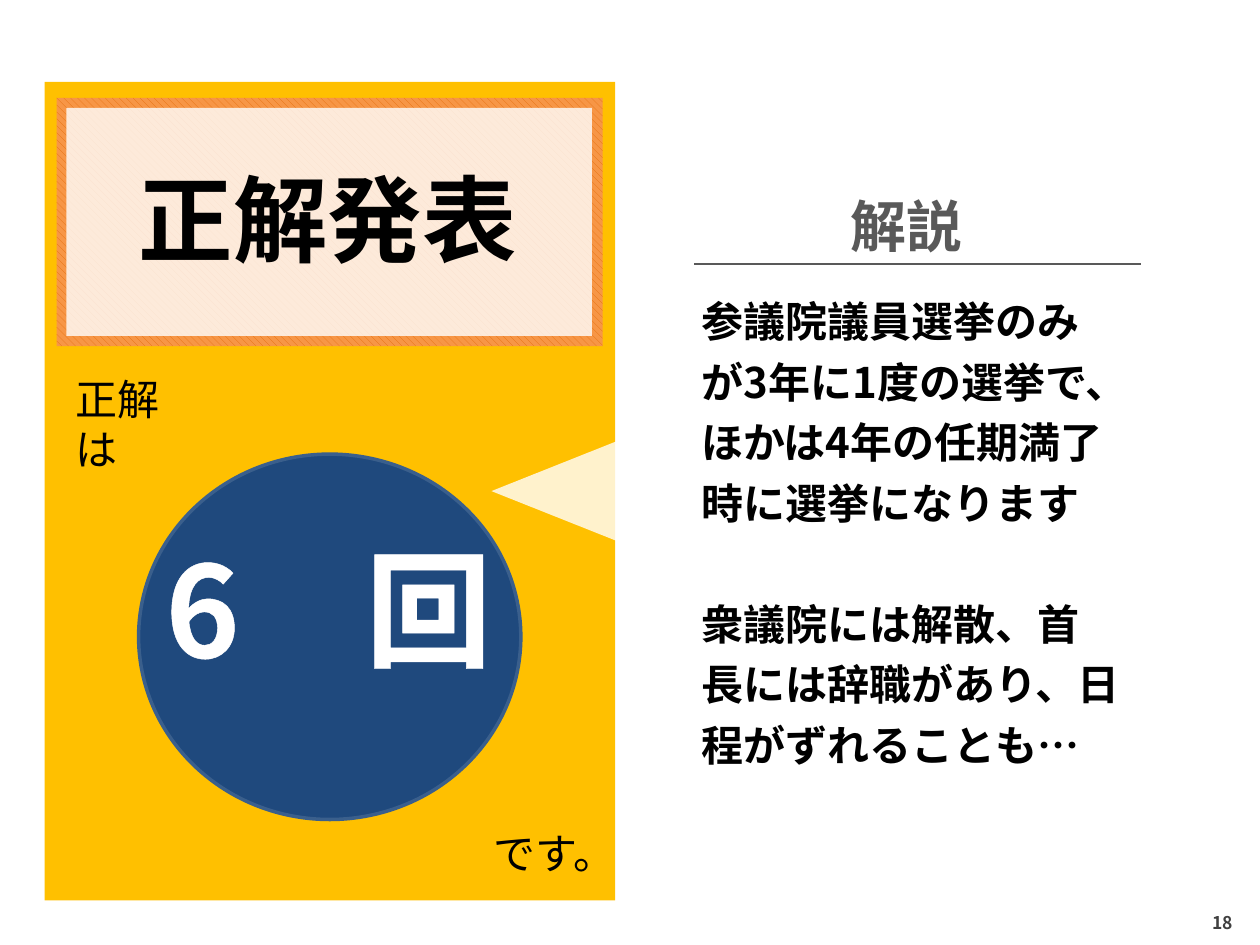
from dataclasses import dataclass
from typing import Optional

from lxml.etree import SubElement
from pptx import Presentation
from pptx.dml.color import RGBColor
from pptx.enum.dml import MSO_PATTERN
from pptx.enum.shapes import MSO_CONNECTOR, MSO_SHAPE
from pptx.enum.text import MSO_ANCHOR, MSO_AUTO_SIZE, PP_ALIGN
from pptx.oxml.ns import qn
from pptx.util import Pt

FONT = "Noto Sans CJK JP"
WHITE = RGBColor(0xFF, 0xFF, 0xFF)
BLACK = RGBColor(0, 0, 0)
AMBER = RGBColor(0xFF, 0xC0, 0x00)
ORANGE = RGBColor(0xF7, 0x96, 0x46)
DARK_ORANGE = RGBColor(0xE4, 0x6C, 0x0A)
NAVY = RGBColor(0x1F, 0x49, 0x7D)
STEEL = RGBColor(0x3A, 0x5F, 0x8C)
GREY = RGBColor(0x59, 0x59, 0x59)
DARK_GREY = RGBColor(0x40, 0x40, 0x40)


@dataclass(frozen=True)
class Box:
    left: float
    top: float
    width: float
    height: float

    def lengths(self):
        return Pt(self.left), Pt(self.top), Pt(self.width), Pt(self.height)


@dataclass(frozen=True)
class Panel:
    box: Box
    fill: Optional[RGBColor]
    kind: MSO_SHAPE = MSO_SHAPE.RECTANGLE
    opacity: int = 100
    rotation: int = 0
    line: Optional[RGBColor] = None
    corner: Optional[float] = None


@dataclass(frozen=True)
class Caption:
    box: Box
    paragraphs: tuple
    size: float
    color: RGBColor = BLACK
    bold: bool = True
    align: PP_ALIGN = PP_ALIGN.LEFT
    wrap: bool = False
    line_spacing: float = 1.0
    gap: float = 0
    outline: float = 0


def add_panel(slide, panel: Panel):
    shape = slide.shapes.add_shape(panel.kind, *panel.box.lengths())
    shape.shadow.inherit = False
    shape.rotation = panel.rotation
    if panel.corner is not None:
        shape.adjustments[0] = panel.corner
    if panel.fill is None:
        shape.fill.patterned()
        shape.fill.pattern = MSO_PATTERN.WIDE_DOWNWARD_DIAGONAL
        shape.fill.fore_color.rgb = DARK_ORANGE
        shape.fill.back_color.rgb = ORANGE
    else:
        shape.fill.solid()
        shape.fill.fore_color.rgb = panel.fill
    if panel.opacity < 100:
        color = shape._element.spPr.find(qn("a:solidFill"))[0]
        SubElement(color, qn("a:alpha"), val=str(panel.opacity * 1000))
    if panel.line is None:
        shape.line.fill.background()
    else:
        shape.line.color.rgb = panel.line
        shape.line.width = Pt(2)
    return shape


def write_text(frame, caption: Caption) -> None:
    frame.word_wrap = caption.wrap
    frame.text = "\n".join(caption.paragraphs)
    for index, paragraph in enumerate(frame.paragraphs):
        paragraph.alignment = caption.align
        paragraph.line_spacing = caption.line_spacing
        paragraph.space_before = Pt(caption.gap if index else 0)
        for run in paragraph.runs:
            run.font.size = Pt(caption.size)
            run.font.bold = caption.bold
            run.font.color.rgb = caption.color
            run.font.name = FONT
            properties = run._r.get_or_add_rPr()
            SubElement(properties, qn("a:ea"), typeface=FONT)
            if caption.outline:
                outline = SubElement(properties, qn("a:ln"), w=str(Pt(caption.outline)))
                fill = SubElement(outline, qn("a:solidFill"))
                SubElement(fill, qn("a:srgbClr"), val=str(caption.color))
                properties.insert(0, outline)


def add_caption(slide, caption: Caption) -> None:
    frame = slide.shapes.add_textbox(*caption.box.lengths()).text_frame
    write_text(frame, caption)
    frame.auto_size = MSO_AUTO_SIZE.SHAPE_TO_FIT_TEXT


def add_rule(slide, left: float, right: float, top: float) -> None:
    rule = slide.shapes.add_connector(
        MSO_CONNECTOR.STRAIGHT, Pt(left), Pt(top), Pt(right), Pt(top))
    rule.line.color.rgb = GREY
    rule.line.width = Pt(0.75)
    SubElement(rule._element.spPr, qn("a:effectLst"))


def add_page_number(slide, number: Caption) -> None:
    frame = add_panel(slide, Panel(number.box, WHITE)).text_frame
    frame.margin_left = frame.margin_right = Pt(3)
    frame.margin_top = frame.margin_bottom = Pt(3)
    frame.vertical_anchor = MSO_ANCHOR.MIDDLE
    write_text(frame, number)


BACKDROP = (
    Panel(Box(25.5, 46.8, 326, 467.7), AMBER),
    Panel(Box(32.4, 56, 312, 141.8), None),
    Panel(Box(38, 61.7, 300.3, 130.3), WHITE, opacity=80),
    Panel(Box(364.3, 46.8, 330.5, 467.7), WHITE, MSO_SHAPE.ROUNDED_RECTANGLE,
          opacity=80, corner=0.06),
    Panel(Box(290.2, 234.5, 73.4, 92.2), WHITE, MSO_SHAPE.ISOSCELES_TRIANGLE,
          opacity=80, rotation=270),
)
PAGE_NUMBER = Caption(Box(677.5, 514.8, 42.5, 25.2), ("18",), 10, DARK_GREY,
                      align=PP_ALIGN.CENTER)
CAPTIONS = (
    Caption(Box(70.9, 88.6, 232.6, 72.7), ("正解発表",), 54, align=PP_ALIGN.CENTER),
    Caption(Box(36, 209.8, 83.5, 36), ("正解は",), 24, bold=False, wrap=True),
    Caption(Box(275, 469.4, 71.3, 36), ("です。",), 24, bold=False),
    Caption(Box(479, 105.8, 79.2, 46), ("解説",), 32, GREY),
    Caption(Box(393.8, 159.8, 253.8, 286.6), (
        "参議院議員選挙のみが3年に1度の選挙で、ほかは4年の任期満了時に選挙になります",
        "衆議院には解散、首長には辞職があり、日程がずれることも…",
    ), 24, wrap=True, line_spacing=1.2, gap=34.6),
)
ANSWER_DISC = Panel(Box(79.2, 259.5, 218.4, 208.8), NAVY, MSO_SHAPE.OVAL, line=STEEL)
ANSWER = Caption(Box(36.2, 300.2, 303.1, 94.3), ("6　回",), 72, WHITE,
                 align=PP_ALIGN.CENTER, wrap=True, outline=1.5)


def main() -> None:
    deck = Presentation()
    deck.slide_width, deck.slide_height = Pt(720), Pt(540)
    slide = deck.slides.add_slide(deck.slide_layouts[6])
    for panel in BACKDROP:
        add_panel(slide, panel)
    add_page_number(slide, PAGE_NUMBER)
    for caption in CAPTIONS:
        add_caption(slide, caption)
    add_rule(slide, 396.7, 651.8, 150.9)
    add_panel(slide, ANSWER_DISC)
    add_caption(slide, ANSWER)
    deck.save("out.pptx")


if __name__ == "__main__":
    main()
